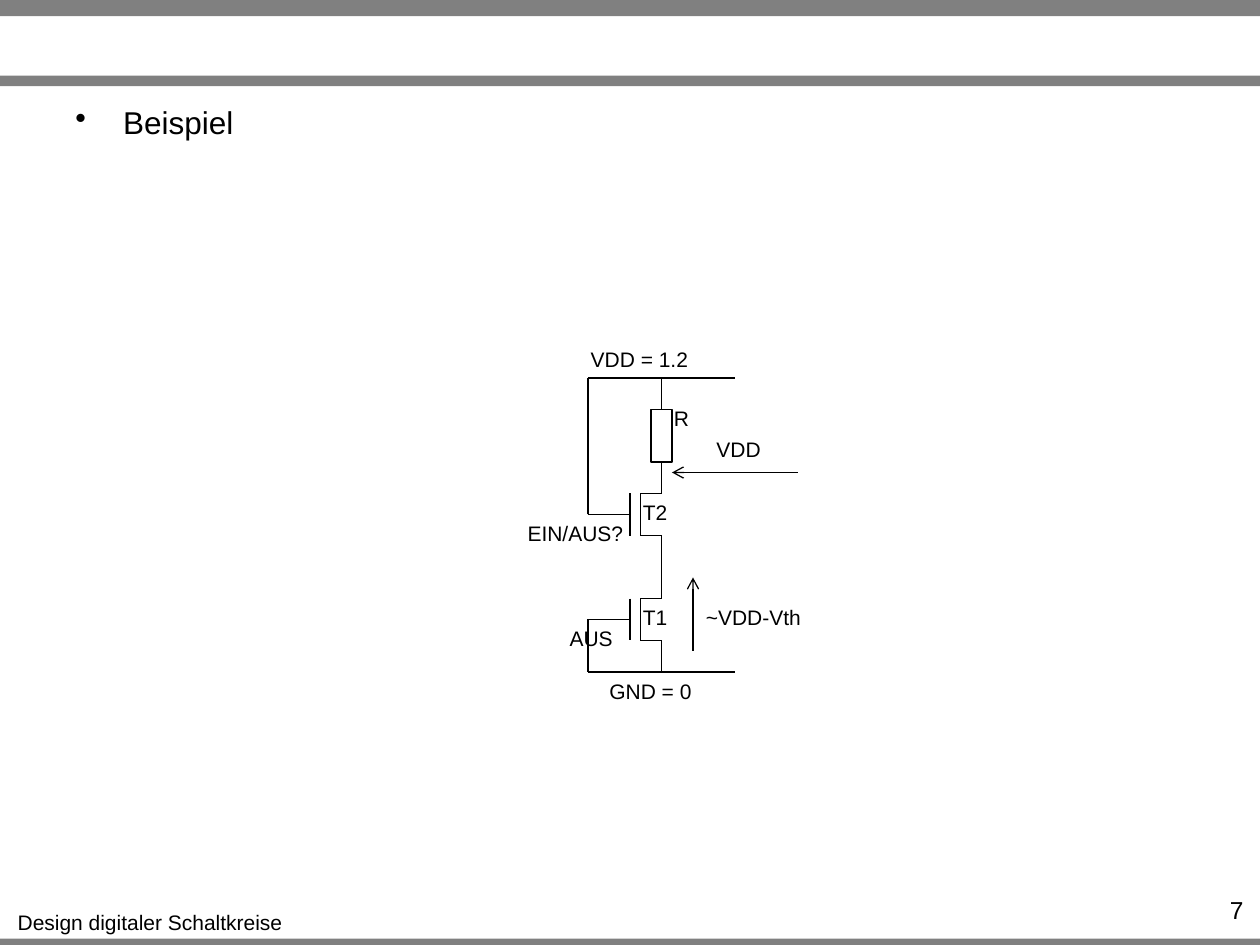
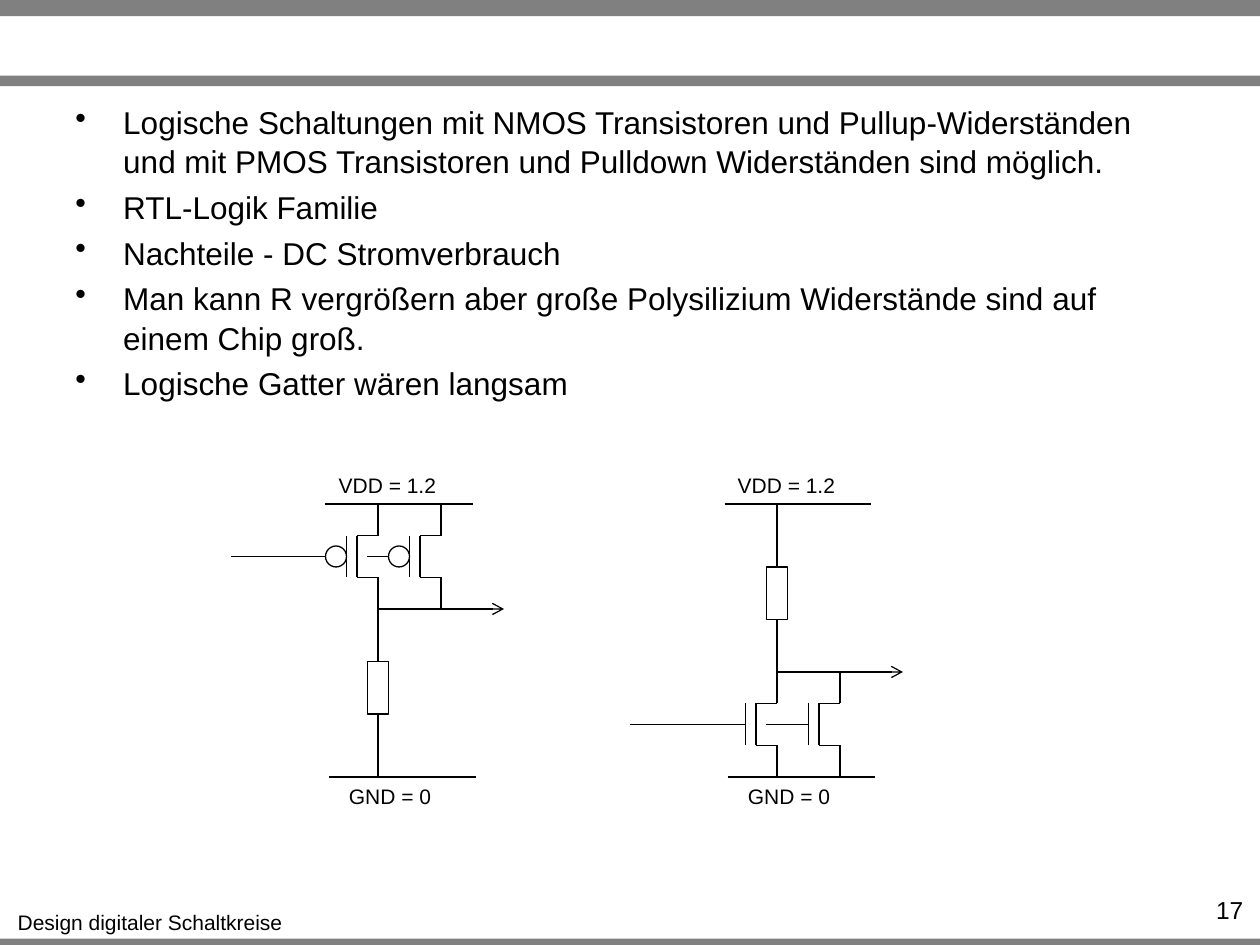
import pptx
import pptx.util
import pptx.dml.color
import pptx.enum.shapes
import pptx.enum.text
import pptx.oxml
import pptx.oxml.ns

# The slide is a grid of 120 columns by 90 rows; one cell is 1/12 inch
COLUMNS, ROWS = 120, 90
CELL = pptx.util.Inches(10) // COLUMNS
FONT = "Arial"
COLOURS = {"band": "808080", "ink": "000000", "paper": "FFFFFF"}
BANDS = [(0, 1.55), (7.2, 1), (89.4, 1)]  # top row, height
LABEL_HEIGHT = 3.6
SHAPE = pptx.enum.shapes.MSO_SHAPE
ALIGN = pptx.enum.text.PP_ALIGN
TOP, BOTTOM = 0, 2


def grid(cells):
    return pptx.util.Emu(round(cells * CELL))


def box(left, top, width, height):
    return [grid(cells) for cells in (left, top, width, height)]


def colour(name):
    return pptx.dml.color.RGBColor.from_string(COLOURS[name])


def add_text(slide, paragraphs, left, top, width, height=LABEL_HEIGHT, *,
             size=12, align=ALIGN.CENTER, wrap=False, bullet=False):
    frame = slide.shapes.add_textbox(*box(left, top, width, height)).text_frame
    frame.word_wrap = wrap
    for number, words in enumerate(paragraphs):
        paragraph = frame.paragraphs[0] if number == 0 else frame.add_paragraph()
        paragraph.alignment = align
        run = paragraph.add_run()
        run.text = words
        run.font.name = FONT
        run.font.size = pptx.util.Pt(size)
        run.font.color.rgb = colour("ink")
        if bullet:
            add_bullet(paragraph, size)


def add_bullet(paragraph, size):
    paragraph.space_before = pptx.util.Pt(0.2 * size)
    paragraph.line_spacing = 1.04
    indent = pptx.util.Inches(0.38)
    properties = paragraph._p.get_or_add_pPr()
    properties.set("marL", str(indent))
    properties.set("indent", str(-indent))
    mark = pptx.oxml.parse_xml(
        f'<a:buChar {pptx.oxml.ns.nsdecls("a")} char="•"/>')
    properties.append(mark)


def add_figure(shapes, kind, left, top, width, height, fill=None, line=None):
    figure = shapes.add_shape(kind, *box(left, top, width, height))
    figure.shadow.inherit = False
    if fill:
        figure.fill.solid()
        figure.fill.fore_color.rgb = colour(fill)
    else:
        figure.fill.background()
    if line:
        figure.line.color.rgb = colour(line)
        figure.line.width = pptx.util.Pt(0.75)
    else:
        figure.line.fill.background()
    return figure


def add_wire(shapes, start, end, *, arrow=False, begin_at=None, end_at=None):
    """Draw from start to end, each (column, row); *_at is (shape, side)."""
    wire = shapes.add_connector(pptx.enum.shapes.MSO_CONNECTOR.STRAIGHT,
                                *[grid(cells) for cells in (*start, *end)])
    wire.line.color.rgb = colour("ink")
    wire.line.width = pptx.util.Pt(0.75)
    namespace = pptx.oxml.ns.nsdecls("a")
    if arrow:
        wire.line._get_or_add_ln().append(
            pptx.oxml.parse_xml(f'<a:tailEnd {namespace} type="arrow"/>'))
    wire._element.spPr.append(pptx.oxml.parse_xml(f"<a:effectLst {namespace}/>"))
    if begin_at:
        wire.begin_connect(*begin_at)
    if end_at:
        wire.end_connect(*end_at)


def add_transistor(slide, drain, gate_row, *, pmos=False, resistor=None):
    """Drain and source lie in column drain; the gate lead comes from the left."""
    parts = slide.shapes.add_group_shape().shapes
    channel, plate = drain - 2, drain - 3
    upper, lower = gate_row - 2, gate_row + 2
    add_wire(parts, (drain, gate_row - 5), (drain, upper),
             begin_at=(resistor, BOTTOM) if resistor else None)
    add_wire(parts, (drain, lower), (drain, gate_row + 5))
    for row in (upper, lower):
        add_wire(parts, (drain, row), (channel, row))
    for column in (channel, plate):
        add_wire(parts, (column, upper), (column, lower))
    lead_end = drain - 5 if pmos else plate
    add_wire(parts, (drain - 7, gate_row), (lead_end, gate_row))
    if pmos:
        add_figure(parts, SHAPE.OVAL, lead_end, gate_row - 1, 2, 2,
                   fill="paper", line="ink")


def add_resistor(slide, column, top, wire_from, wire_to=None):
    resistor = add_figure(slide.shapes, SHAPE.RECTANGLE, column - 1, top, 2, 5,
                          line="ink")
    add_wire(slide.shapes, (column, wire_from), (column, top),
             end_at=(resistor, TOP))
    if wire_to:
        add_wire(slide.shapes, (column, top + 5), (column, wire_to),
                 begin_at=(resistor, BOTTOM))
    return resistor


def add_rail(slide, left, row):
    add_wire(slide.shapes, (left, row), (left + 14, row))


def add_supply(slide, vdd, gnd, vdd_label, gnd_label):
    """vdd and gnd are (column, row); the labels give their left columns."""
    add_rail(slide, *vdd)
    add_rail(slide, *gnd)
    add_text(slide, ["VDD = 1.2"], vdd_label, vdd[1] - LABEL_HEIGHT, 11.8)
    add_text(slide, ["GND = 0"], gnd_label, gnd[1], 10.3)


def add_logic_gate(slide, drain, gate_row, output_row, resistor, pmos=False):
    """Two parallel transistors and a resistor (top, wire_from, wire_to)."""
    add_supply(slide, (drain - 5, 48), (drain - 4.7, 74), drain - 5, drain - 4)
    add_resistor(slide, drain, *resistor)
    for column in (drain, drain + 6):
        add_transistor(slide, column, gate_row, pmos=pmos)
    add_wire(slide.shapes, (drain - 14, gate_row), (drain - 7, gate_row))
    add_wire(slide.shapes, (drain, output_row), (drain + 12, output_row), arrow=True)


def add_slide(deck, number, points):
    slide = deck.slides.add_slide(deck.slide_layouts[6])
    for top, height in BANDS:
        add_figure(slide.shapes, SHAPE.RECTANGLE, 0, top, COLUMNS, height, fill="band")
    add_text(slide, ["Design digitaler Schaltkreise"], 0.4, 86, 27.8)
    add_text(slide, points, 6, 9.1, 108, 7.9, size=18, align=ALIGN.LEFT,
             wrap=True, bullet=True)
    add_text(slide, [str(number)], 109.2, 84.7, 10.4, 2.9, size=14,
             align=ALIGN.RIGHT, wrap=True)
    return slide


def build_example(deck):
    slide = add_slide(deck, 7, ["Beispiel"])
    drain, gate, vdd, gnd, t2_row, t1_row = 63, 56, 36, 64, 49, 59
    add_supply(slide, (gate, vdd), (gate, gnd), 55, 56.8)
    resistor = add_resistor(slide, drain, 39, vdd)
    add_transistor(slide, drain, t2_row, resistor=resistor)
    add_transistor(slide, drain, t1_row)

    # Gates tied to the rails
    add_wire(slide.shapes, (gate, t2_row), (gate, vdd))
    add_wire(slide.shapes, (gate, gnd), (gate, t1_row))

    # Voltage arrows
    add_wire(slide.shapes, (66, 62), (66, 55), arrow=True)
    add_wire(slide.shapes, (76, 45), (64, 45), arrow=True)

    labels = [("~VDD-Vth", 66, 57, 11.5), ("AUS", 53, 59, 6.6),
              ("EIN/AUS?", 49, 49, 11.6), ("VDD", 67, 41, 6.7),
              ("T1", 60, 57, 4.8), ("T2", 60, 47, 4.8), ("R", 63, 38, 3.8)]
    for words, left, top, width in labels:
        add_text(slide, [words], left, top, width)


def build_rtl_logic(deck):
    slide = add_slide(deck, 17, [
        "Logische Schaltungen mit NMOS Transistoren und Pullup-Widerständen "
        "und mit PMOS Transistoren und Pulldown Widerständen sind möglich.",
        "RTL-Logik Familie",
        "Nachteile - DC Stromverbrauch",
        "Man kann R vergrößern aber große Polysilizium Widerstände sind auf "
        "einem Chip groß.",
        "Logische Gatter wären langsam",
    ])
    add_logic_gate(slide, 36, 53, 58, resistor=(63, 58, 74), pmos=True)
    add_logic_gate(slide, 74, 69, 64, resistor=(54, 48, 65))


def main():
    deck = pptx.Presentation()
    deck.slide_width, deck.slide_height = grid(COLUMNS), grid(ROWS)
    build_example(deck)
    build_rtl_logic(deck)
    deck.save("out.pptx")


if __name__ == "__main__":
    main()
